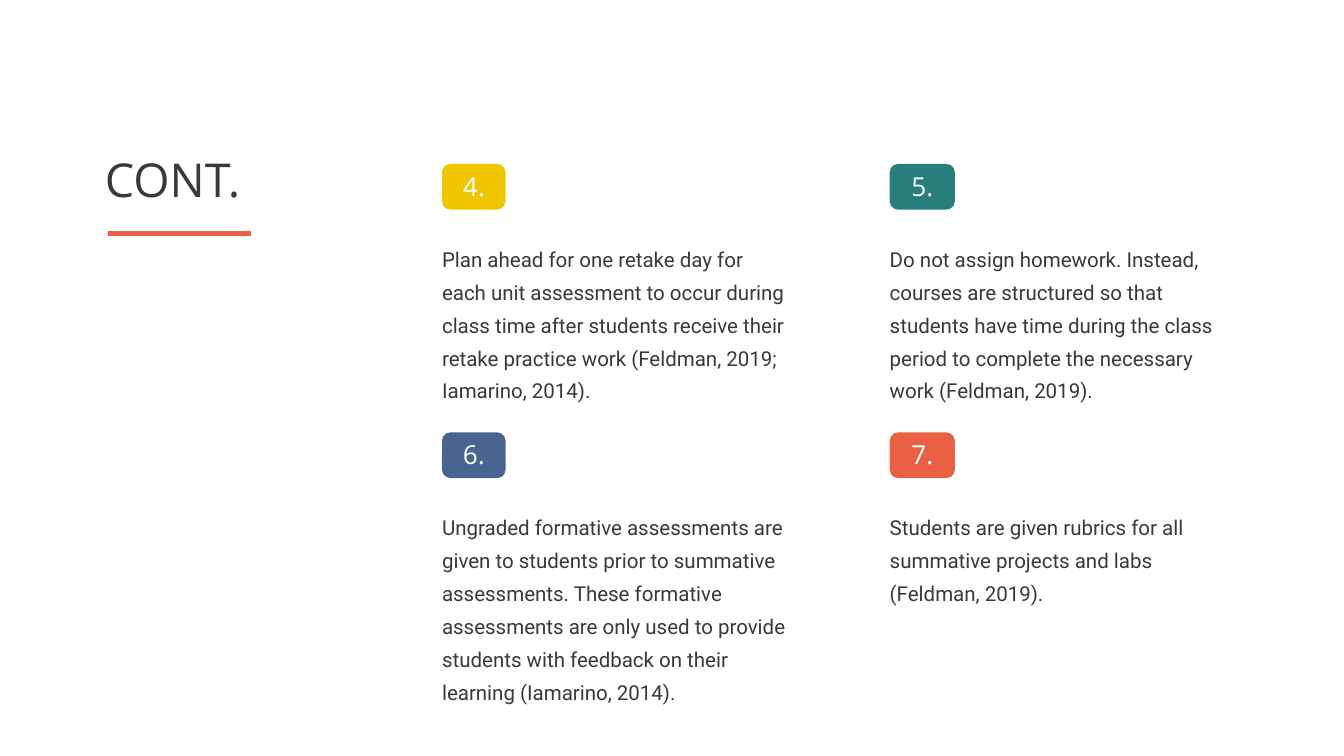
from pptx import Presentation
from pptx.dml.color import RGBColor
from pptx.enum.shapes import MSO_CONNECTOR, MSO_SHAPE
from pptx.enum.text import MSO_AUTO_SIZE, PP_ALIGN
from pptx.oxml.ns import qn
from pptx.util import Pt
from lxml import etree

INK = RGBColor(0x3B, 0x38, 0x38)
WHITE = RGBColor(0xFF, 0xFF, 0xFF)
YELLOW = RGBColor(0xF0, 0xC6, 0x00)
TEAL = RGBColor(0x28, 0x7D, 0x7D)
BLUE = RGBColor(0x4A, 0x64, 0x91)
CORAL = RGBColor(0xEA, 0x60, 0x45)

HEADING_FONT = "Open Sans"
BODY_FONT = "Roboto"

# Grid of practices: (left edge, badge width) per column, top edge per row
COLUMNS = [(473.6, 68.1), (953.3, 69.8)]
ROWS = [175.6, 463.2]
BADGE_HEIGHT = 49
BADGE_RADIUS = 9
BODY_OFFSET = 80.2
BODY_WIDTH = 375

# Colour, number, text and body height, row by row
PRACTICES = [
    (YELLOW, "4.", "Plan ahead for one retake day for each unit assessment to occur "
     "during class time after students receive their retake practice work "
     "(Feldman, 2019; Iamarino, 2014).", 171),
    (TEAL, "5.", "Do not assign homework. Instead, courses are structured so that "
     "students have time during the class period to complete the necessary work "
     "(Feldman, 2019).", 173),
    (BLUE, "6.", "Ungraded formative assessments are given to students prior to "
     "summative assessments. These formative assessments are only used to provide "
     "students with feedback on their learning (Iamarino, 2014).", 240),
    (CORAL, "7.", "Students are given rubrics for all summative projects and labs "
     "(Feldman, 2019).", 101),
]


def add_text(shapes, text, left, top, width, height, font, size, spacing,
             color=INK, align=PP_ALIGN.LEFT):
    frame = shapes.add_textbox(Pt(left), Pt(top), Pt(width), Pt(height)).text_frame
    frame.margin_left = frame.margin_right = frame.margin_top = frame.margin_bottom = 0
    frame.word_wrap = True
    frame.auto_size = MSO_AUTO_SIZE.SHAPE_TO_FIT_TEXT
    frame.text = text
    paragraph = frame.paragraphs[0]
    paragraph.alignment = align
    paragraph.line_spacing = Pt(spacing)
    run_font = paragraph.runs[0].font
    run_font.name, run_font.size = font, Pt(size)
    run_font.color.rgb = color


def add_rule(shapes, left, right, y):
    rule = shapes.add_connector(MSO_CONNECTOR.STRAIGHT, Pt(left), Pt(y), Pt(right), Pt(y))
    rule.line.color.rgb = CORAL
    rule.line.width = Pt(5.25)
    etree.SubElement(rule._element.spPr, qn("a:effectLst"))


def add_badge(shapes, number, color, left, top, width):
    badge = shapes.add_group_shape().shapes
    plate = badge.add_shape(MSO_SHAPE.ROUNDED_RECTANGLE,
                            Pt(left), Pt(top), Pt(width), Pt(BADGE_HEIGHT))
    plate.adjustments[0] = BADGE_RADIUS / BADGE_HEIGHT
    plate.shadow.inherit = False
    plate.fill.solid()
    plate.fill.fore_color.rgb = color
    plate.line.fill.background()
    add_text(badge, number, left, top + 9.4, width, 31.7, HEADING_FONT, 28, 30.8,
             WHITE, PP_ALIGN.CENTER)


def main():
    deck = Presentation()
    deck.slide_width, deck.slide_height = Pt(1440), Pt(810)
    shapes = deck.slides.add_slide(deck.slide_layouts[6]).shapes

    # Title with its underline
    add_rule(shapes, 115.4, 269.3, 250.6)
    add_text(shapes, "CONT.", 112.3, 166.3, 252.7, 56.9, HEADING_FONT, 50, 55)

    # Numbered practices, two to a row
    for index, (color, number, text, height) in enumerate(PRACTICES):
        row, column = divmod(index, len(COLUMNS))
        left, badge_width = COLUMNS[column]
        top = ROWS[row]
        add_text(shapes, text, left, top + BODY_OFFSET, BODY_WIDTH, height,
                 BODY_FONT, 22, 35.2)
        add_badge(shapes, number, color, left, top, badge_width)

    deck.save("out.pptx")


if __name__ == "__main__":
    main()
